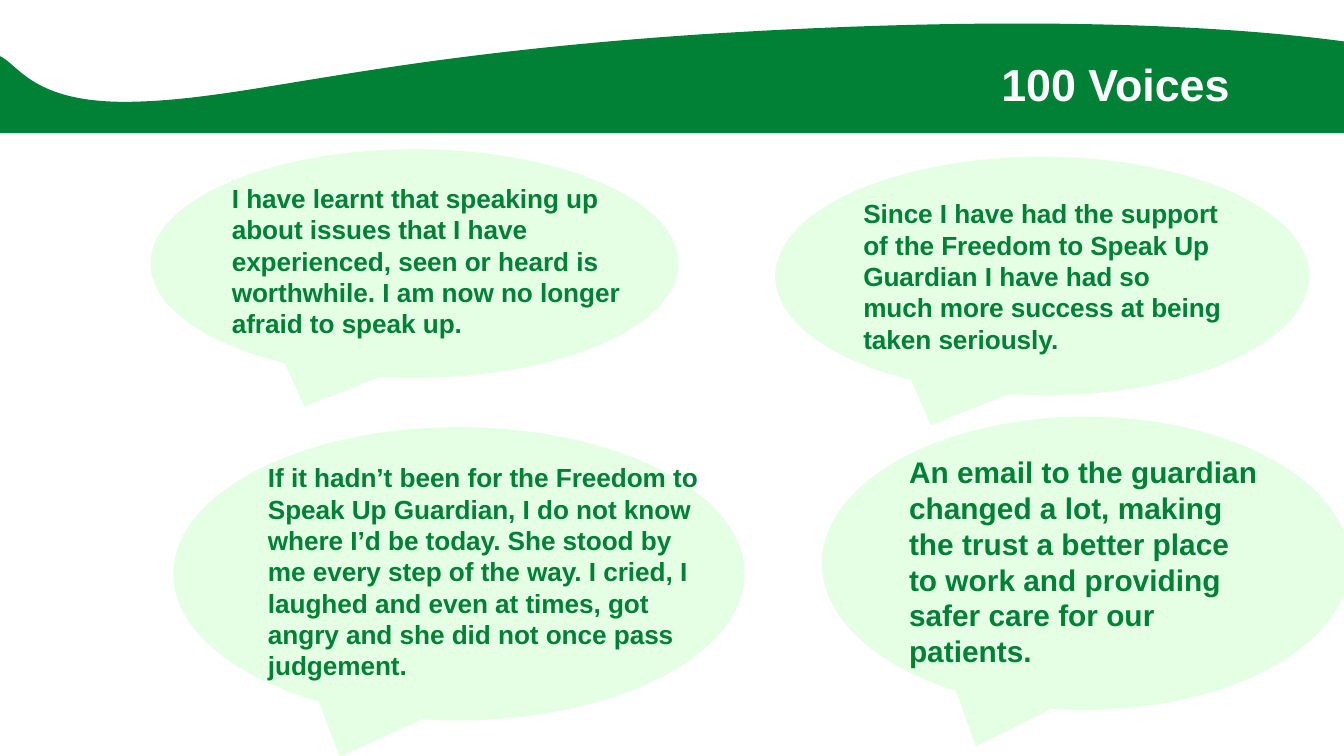
from dataclasses import dataclass
from typing import Optional

from lxml.etree import SubElement
from pptx import Presentation
from pptx.dml.color import RGBColor
from pptx.enum.shapes import MSO_SHAPE
from pptx.enum.text import MSO_ANCHOR, MSO_AUTO_SIZE, PP_ALIGN
from pptx.oxml.ns import qn
from pptx.util import Pt

COLOURS = {"green": "008136", "mint": "E5FFE5", "white": "FFFFFF"}
FONT = "Arial"

Point = tuple[float, float]
Box = tuple[float, float, float, float]


@dataclass
class Voice:
    """A quotation; text_area is set when the words reach past the bubble's own text frame."""
    bubble: Box
    text: str
    size: float = 18.67
    text_area: Optional[Box] = None
    margin_bottom: float = 3.6


VOICES = [
    Voice((553.7, 112, 381.6, 170.6),
          "Since I have had the support of the Freedom to Speak Up Guardian "
          "I have had so much more success at being taken seriously."),
    Voice((107.5, 106.6, 377.3, 163.4),
          "I have learnt that speaking up about issues that I have experienced, "
          "seen or heard is worthwhile. I am now no longer afraid to speak up.",
          text_area=(158.5, 126.7, 326.2, 120.2)),
    Voice((123.8, 305.1, 408.2, 209.5),
          "If it hadn’t been for the Freedom to Speak Up Guardian, I do not know "
          "where I’d be today. She stood by me every step of the way. I cried, I laughed "
          "and even at times, got angry and she did not once pass judgement.",
          text_area=(184.3, 326.2, 322, 165.6)),
    Voice((587, 297.6, 377.3, 209.5),
          "An email to the guardian changed a lot, making the trust a better place "
          "to work and providing safer care for our patients.",
          size=21.33, margin_bottom=6.6),
]

WAVE_BOX = (-30.2, 16.6, 1090.8, 77)
WAVE_START = (964.1, 30.2)
# Each curve: two control points, then its end point
WAVE_CURVES = [
    ((887, 19.4), (738.7, 9.4), (501.8, 24.5)),
    ((264.2, 40.3), (180.7, 70.6), (95.8, 72.7)),
    ((10.8, 74.9), (12.2, 35.3), (-8.6, 38.9)),
    ((-29.5, 41.8), (-27.4, 93.6), (-29.5, 92.9)),
    ((-34.6, 90.7), (794.9, 96.5), (965.5, 92.2)),
    ((1136.2, 87.1), (1041.1, 41.8), WAVE_START),
]
BAND = (-9.4, 75.6, 973.4, 19.5)
TITLE_BOX = (687.2, 13, 296.6, 93.6)


def colour(name: str) -> RGBColor:
    return RGBColor.from_string(COLOURS[name])


def lengths(values) -> list[Pt]:
    return [Pt(value) for value in values]


def paint(shape, fill: str) -> None:
    shape.shadow.inherit = False
    shape.fill.solid()
    shape.fill.fore_color.rgb = colour(fill)
    shape.line.fill.background()


def write(text_frame, text: str, size: float, text_colour: str) -> None:
    text_frame.text = text
    text_frame.word_wrap = True
    paragraph = text_frame.paragraphs[0]
    paragraph.alignment = PP_ALIGN.LEFT
    font = paragraph.runs[0].font
    font.name = FONT
    font.size = Pt(size)
    font.bold = True
    font.color.rgb = colour(text_colour)


def add_path_step(path, tag: str, points: list[Point]) -> None:
    """Append a path command whose points are measured from the corner of the wave."""
    command = SubElement(path, qn(tag))
    for x, y in points:
        SubElement(command, qn("a:pt"), x=str(int(Pt(x - WAVE_BOX[0]))),
                   y=str(int(Pt(y - WAVE_BOX[1]))))


def draw_wave(slide) -> None:
    """Frame the wave with a freeform, then give it its curved outline."""
    left, top, width, height = lengths(WAVE_BOX)
    right, bottom = left + width, top + height
    builder = slide.shapes.build_freeform(left, top, scale=1.0)
    builder.add_line_segments([(right, top), (right, bottom), (left, bottom)])
    wave = builder.convert_to_shape()
    path = wave.element.find(".//" + qn("a:path"))
    for command in list(path):
        path.remove(command)
    add_path_step(path, "a:moveTo", [WAVE_START])
    for curve in WAVE_CURVES:
        add_path_step(path, "a:cubicBezTo", curve)
    add_path_step(path, "a:close", [])
    paint(wave, "green")


def draw_header(slide) -> None:
    draw_wave(slide)
    paint(slide.shapes.add_shape(MSO_SHAPE.RECTANGLE, *lengths(BAND)), "green")


def draw_title(slide) -> None:
    title = slide.shapes.title
    title.left, title.top, title.width, title.height = lengths(TITLE_BOX)
    text_frame = title.text_frame
    write(text_frame, "100 Voices", 32, "white")
    text_frame.auto_size = MSO_AUTO_SIZE.NONE
    text_frame.vertical_anchor = MSO_ANCHOR.MIDDLE
    text_frame.margin_left = text_frame.margin_right = Pt(28)
    text_frame.margin_top = text_frame.margin_bottom = Pt(11.5)
    # Bring the title in front of the header
    title.element.getparent().append(title.element)


def draw_voice(slide, voice: Voice) -> None:
    bubble = slide.shapes.add_shape(MSO_SHAPE.OVAL_CALLOUT, *lengths(voice.bubble))
    paint(bubble, "mint")
    if voice.text_area:
        text_frame = slide.shapes.add_textbox(*lengths(voice.text_area)).text_frame
    else:
        text_frame = bubble.text_frame
        text_frame.vertical_anchor = MSO_ANCHOR.MIDDLE
        text_frame.margin_bottom = Pt(voice.margin_bottom)
    write(text_frame, voice.text, voice.size, "green")


def main() -> None:
    presentation = Presentation()
    presentation.slide_width, presentation.slide_height = Pt(960), Pt(540)
    slide = presentation.slides.add_slide(presentation.slide_layouts[5])
    draw_header(slide)
    draw_title(slide)
    for voice in VOICES:
        draw_voice(slide, voice)
    presentation.save("out.pptx")


if __name__ == "__main__":
    main()
